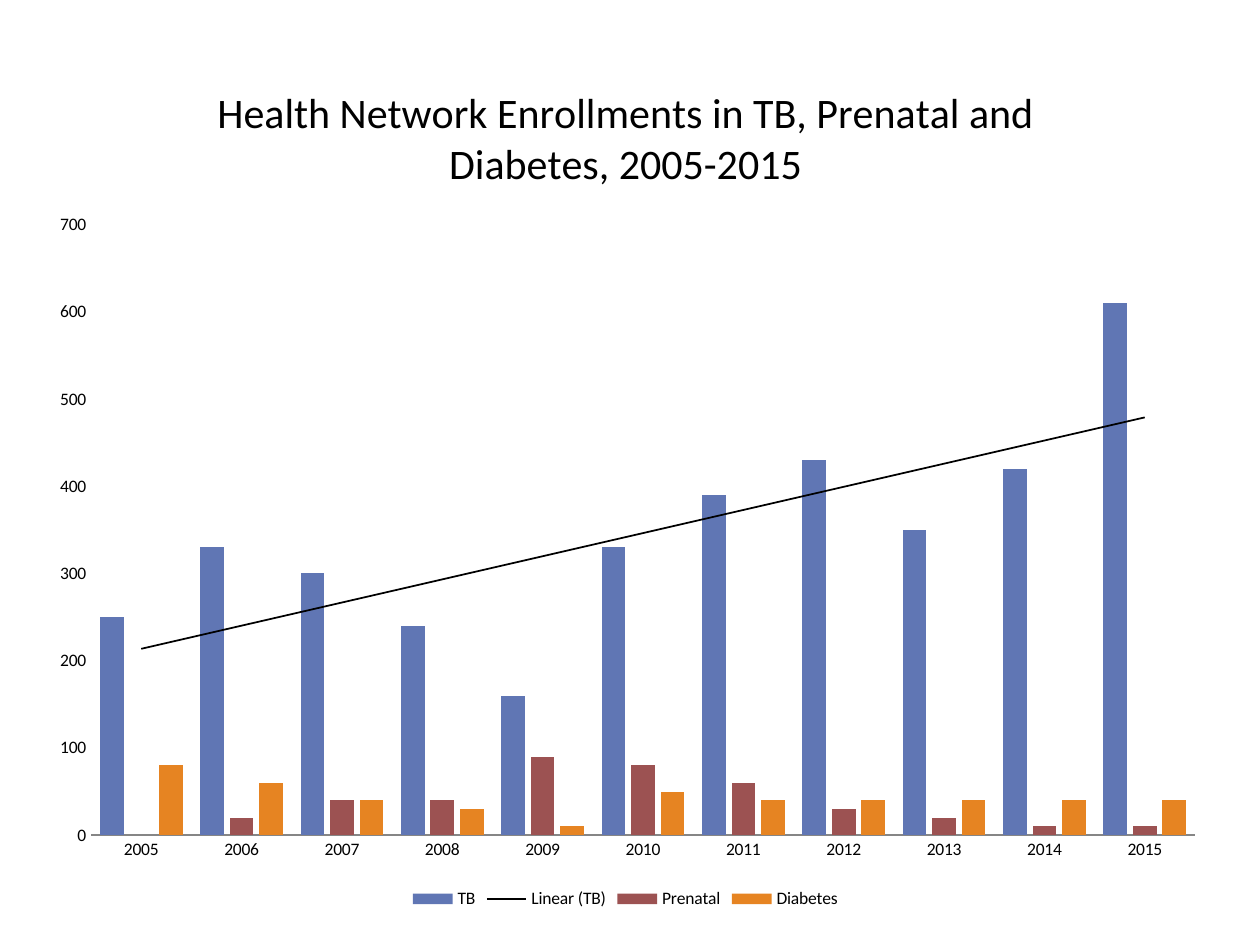
from dataclasses import dataclass

from lxml.etree import SubElement
from pptx import Presentation
from pptx.chart.data import CategoryChartData
from pptx.dml.color import RGBColor
from pptx.enum.chart import XL_CHART_TYPE, XL_LEGEND_POSITION, XL_TICK_MARK
from pptx.oxml import parse_xml
from pptx.oxml.ns import nsdecls, qn
from pptx.util import Cm, Pt


@dataclass(frozen=True)
class Theme:
    font: str = "Calibri"
    text: str = "000000"
    axis: str = "868686"
    title_size: int = 24
    label_size: int = 10


THEME = Theme()
TITLE = "Health Network Enrollments in TB, Prenatal and Diabetes, 2005-2015"
YEARS = [str(year) for year in range(2005, 2016)]
# Program name: (colour, enrollments by year)
PROGRAMS = {
    "TB": ("6076B4", [250, 330, 300, 240, 160, 330, 390, 430, 350, 420, 610]),
    "Prenatal": ("9C5252", [None, 20, 40, 40, 90, 80, 60, 30, 20, 10, 10]),
    "Diabetes": ("E68422", [80, 60, 40, 30, 10, 50, 40, 40, 40, 40, 40]),
}


def color(value):
    return RGBColor.from_string(value)


def format_font(font, size):
    font.name = THEME.font
    font.size = Pt(size)
    font.bold = False
    font.color.rgb = color(THEME.text)


def manual_layout(**settings):
    """Chart layout with positions given as fractions of the chart box."""
    layout = parse_xml(f"<c:layout {nsdecls('c')}><c:manualLayout/></c:layout>")
    for name, value in settings.items():
        SubElement(layout[0], qn(f"c:{name}")).set("val", str(value))
    return layout


def add_linear_trend(series):
    trend = parse_xml(
        f"<c:trendline {nsdecls('c', 'a')}>"
        f'<c:spPr><a:ln w="{Pt(1)}"><a:solidFill><a:srgbClr val="{THEME.text}"/>'
        "</a:solidFill></a:ln></c:spPr>"
        '<c:trendlineType val="linear"/><c:dispRSqr val="0"/><c:dispEq val="0"/>'
        "</c:trendline>"
    )
    series._element.find(qn("c:cat")).addprevious(trend)


def format_title(chart):
    chart.has_title = True
    title = chart.chart_title
    title.include_in_layout = False
    title.text_frame.text = TITLE
    format_font(title.text_frame.paragraphs[0].runs[0].font, THEME.title_size)
    element = title._element
    for layout in element.findall(qn("c:layout")):
        element.remove(layout)
    element.find(qn("c:tx")).addnext(
        manual_layout(xMode="edge", yMode="edge", x=0.15, y=0.04))


def format_axes(chart):
    for axis in (chart.category_axis, chart.value_axis):
        axis.major_tick_mark = XL_TICK_MARK.NONE
        axis.minor_tick_mark = XL_TICK_MARK.NONE
        axis.has_major_gridlines = False
    chart.category_axis.format.line.color.rgb = color(THEME.axis)
    value_axis = chart.value_axis
    value_axis.format.line.fill.background()
    value_axis.minimum_scale = 0
    value_axis.maximum_scale = 700
    value_axis.major_unit = 100


def add_enrollment_chart(slide, left, top, width, height):
    data = CategoryChartData()
    data.categories = YEARS
    for name, (_, values) in PROGRAMS.items():
        data.add_series(name, values)
    chart = slide.shapes.add_chart(
        XL_CHART_TYPE.COLUMN_CLUSTERED, left, top, width, height, data).chart
    format_font(chart.font, THEME.label_size)

    # Columns and trend line
    plot = chart.plots[0]
    plot.vary_by_categories = False
    plot.gap_width = 75
    plot.overlap = -25
    for series in plot.series:
        series.format.fill.solid()
        series.format.fill.fore_color.rgb = color(PROGRAMS[series.name][0])
    add_linear_trend(plot.series[0])

    # Title, axes and legend
    format_title(chart)
    format_axes(chart)
    chart.has_legend = True
    chart.legend.position = XL_LEGEND_POSITION.BOTTOM
    chart.legend.include_in_layout = False

    # Plot area below the title
    plot_area = chart._chartSpace.chart.plotArea
    for layout in plot_area.findall(qn("c:layout")):
        plot_area.remove(layout)
    plot_area.insert(0, manual_layout(
        layoutTarget="inner", xMode="edge", yMode="edge",
        x=0.05, y=0.21, w=0.93, h=0.7))


def main():
    presentation = Presentation()
    presentation.slide_width = Cm(25.4)
    presentation.slide_height = Cm(19.05)
    slide = presentation.slides.add_slide(presentation.slide_layouts[6])
    add_enrollment_chart(slide, Cm(0.64), Cm(0.84), Cm(23.93), Cm(17.58))
    presentation.save("out.pptx")


if __name__ == "__main__":
    main()
